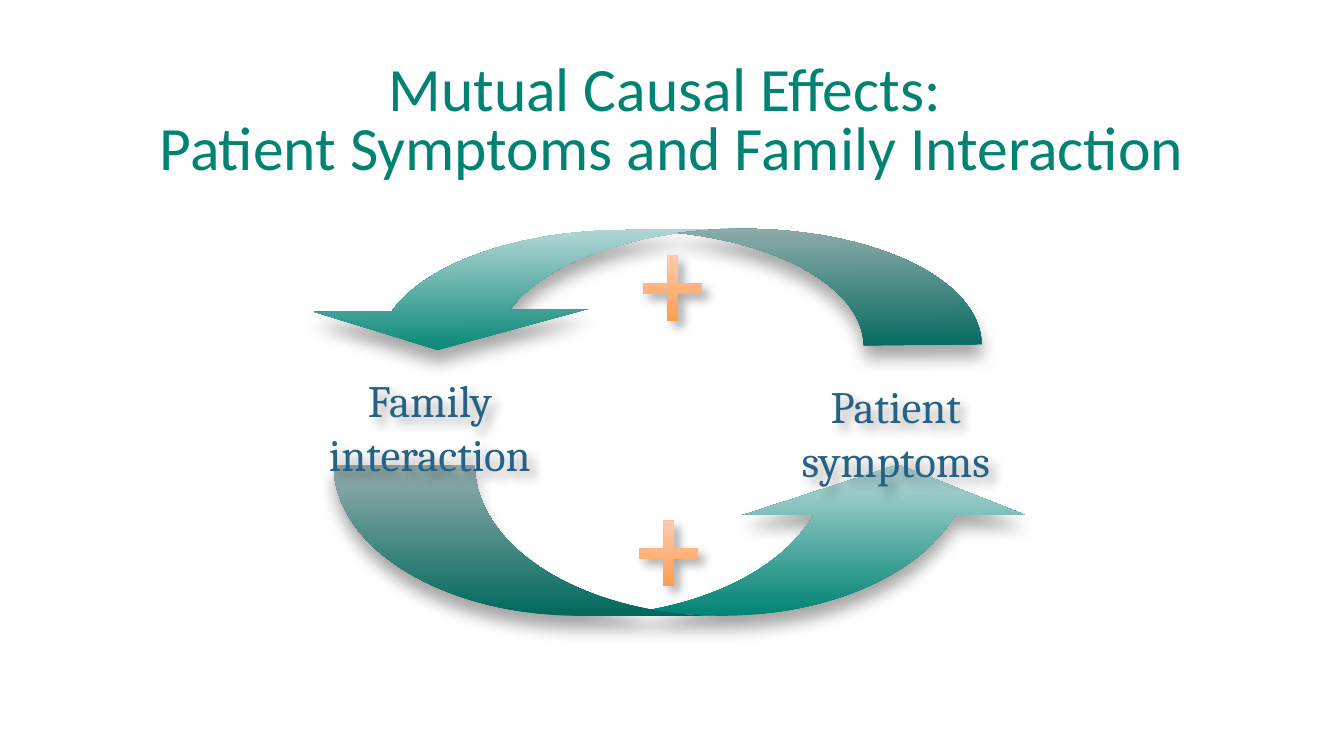
"""Build a slide showing the loop between patient symptoms and family interaction."""
from lxml import etree
from pptx import Presentation
from pptx import util as u
from pptx.dml.color import RGBColor
from pptx.enum import shapes, text
from pptx.oxml.ns import qn

THEME = {
    "teal": ("008373", "BBDBDB"), "peach": ("FF953E", "FFD2BD"),
    "head": ("Calibri", 44, "008373"), "label": ("Cambria", 32, "256285"),
    "deep": (11.8, 9, 90), "soft": (7.5, 6, 45),
}
KIND = shapes.MSO_SHAPE
TITLE = "Mutual Causal Effects: \vPatient Symptoms and Family Interaction"
LABELS = [
    ("Family\vinteraction", (2.5, 3.65, 3.53, 0.64)),
    ("Patient\vsymptoms", (7.18, 3.71, 3.41, 0.64)),
]
ARROWS = [
    (KIND.CURVED_UP_ARROW, (3.31, 4.61, 7, 1.5), (0.933, 1.867, 0.333), 0, False),
    (KIND.CURVED_DOWN_ARROW, (2.98, 2.28, 6.75, 1.17), (1.157, 2.314, 0.333), 359.4, True),
]
PLUSES = [(6.27, 2.42, 0.8, 0.88), (6.23, 5.05, 0.8, 0.88)]


def inch(box):
    """Turn a box in inches into lengths."""
    return [u.Inches(n) for n in box]


def shade(shape, style):
    """Give a shape a soft black shadow."""
    blur, dist, turn = THEME[style]
    shape.shadow.inherit = False
    root = shape.element.spPr.find(qn("a:effectLst"))
    drop = etree.SubElement(root, qn("a:outerShdw"), blurRad=str(u.Pt(blur)),
                            dist=str(u.Pt(dist)), dir=str(turn * 60000),
                            algn="ctr", rotWithShape="0")
    tint = etree.SubElement(drop, qn("a:srgbClr"), val="000000")
    etree.SubElement(tint, qn("a:alpha"), val="35000")


def draw(slide, kind, box, adjust, tone, style):
    """Add a preset shape that fades upward to a lighter tone."""
    shape = slide.shapes.add_shape(kind, *inch(box))
    for i, value in enumerate(adjust):
        shape.adjustments[i] = value
    shape.fill.gradient()
    shape.fill.gradient_angle = 90
    for stop, tint in zip(shape.fill.gradient_stops, THEME[tone]):
        stop.color.rgb = RGBColor.from_string(tint)
    shape.line.fill.background()
    shade(shape, style)
    return shape


def write(slide, words, box, style):
    """Add a centred text box."""
    shape = slide.shapes.add_textbox(*inch(box))
    frame = shape.text_frame
    frame.text = words
    frame.word_wrap = True
    para = frame.paragraphs[0]
    para.alignment = text.PP_ALIGN.CENTER
    name, size, tint = THEME[style]
    for run in para.runs:
        run.font.name, run.font.size = name, u.Pt(size)
        run.font.color.rgb = RGBColor.from_string(tint)
    return shape


def main():
    """Lay out the slide and save it."""
    deck = Presentation()
    deck.slide_width, deck.slide_height = inch((13.33, 7.5))
    slide = deck.slides.add_slide(deck.slide_layouts[6])

    frame = write(slide, TITLE, (0, 0.6, 13.33, 1.25), "head").text_frame
    frame.margin_left = frame.margin_right = 0
    frame.vertical_anchor = text.MSO_ANCHOR.MIDDLE
    frame.paragraphs[0].line_spacing = u.Pt(42)

    for kind, box, adjust, turn, flip in ARROWS:
        arrow = draw(slide, kind, box, adjust, "teal", "deep")
        arrow.rotation = turn
        if flip:
            arrow.element.spPr.xfrm.set("flipH", "1")
    for words, box in LABELS:
        shade(write(slide, words, box, "label"), "soft")
    for box in PLUSES:
        draw(slide, KIND.MATH_PLUS, box, (0.124,), "peach", "soft")

    deck.save("out.pptx")


if __name__ == "__main__":
    main()
